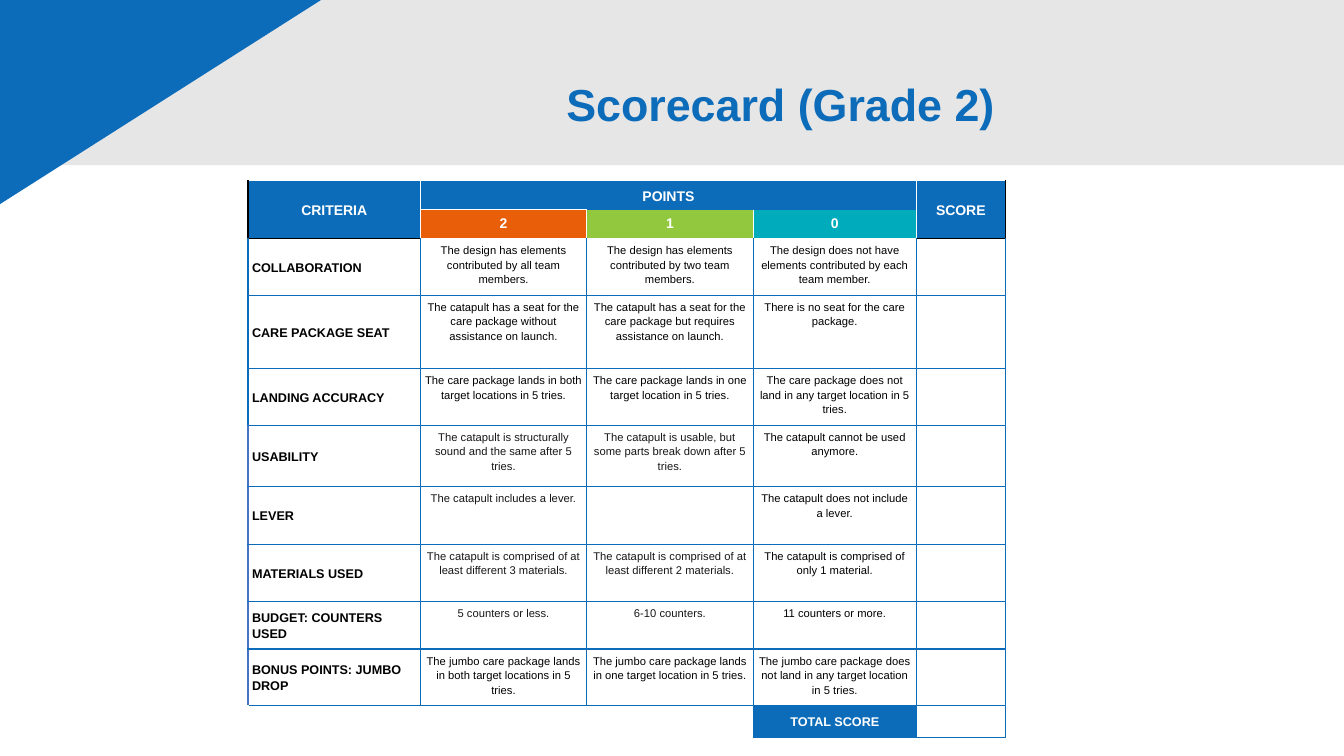
from dataclasses import dataclass
from typing import Optional

import lxml.etree
import pptx
import pptx.dml.color
import pptx.enum.shapes
import pptx.enum.text
import pptx.oxml.ns
import pptx.util

EMU_PER_PX = 9144  # 100 px to the inch
ALIGN = pptx.enum.text.PP_ALIGN
ANCHOR = pptx.enum.text.MSO_ANCHOR
PRESET = pptx.enum.shapes.MSO_SHAPE


@dataclass(frozen=True)
class Theme:
    font: str = "Arial"
    blue: str = "0D6CB9"
    accent: str = "4472C4"
    grey: str = "E7E6E6"
    orange: str = "E95E09"
    green: str = "92C83E"
    teal: str = "00ACBB"
    white: str = "FFFFFF"
    black: str = "000000"
    ink: str = "181717"
    title_size: int = 32
    header_size: int = 10
    label_size: int = 9
    body_size: int = 8


THEME = Theme()


@dataclass(frozen=True)
class Box:
    left: int
    top: int
    width: int
    height: int


@dataclass(frozen=True)
class Criterion:
    label: str
    levels: tuple[str, str, str]
    height: int
    level_colour: str = THEME.black


@dataclass(frozen=True)
class CellStyle:
    size: int
    colour: str
    fill: str = THEME.white
    bold: bool = False
    align: ALIGN = ALIGN.CENTER
    anchor: ANCHOR = ANCHOR.MIDDLE


CRITERIA = (
    Criterion("COLLABORATION", (
        "The design has elements contributed by all team members.",
        "The design has elements contributed by two team members.",
        "The design does not have elements contributed by each team member."), 56),
    Criterion("CARE PACKAGE SEAT", (
        "The catapult has a seat for the care package without assistance on launch.",
        "The catapult has a seat for the care package but requires assistance on launch.",
        "There is no seat for the care package."), 73),
    Criterion("LANDING ACCURACY", (
        "The care package lands in both target locations in 5 tries.",
        "The care package lands in one target location in 5 tries.",
        "The care package does not land in any target location in 5 tries."), 56),
    Criterion("USABILITY", (
        "The catapult is structurally sound and the same after 5 tries.",
        "The catapult is usable, but some parts break down after 5 tries.",
        "The catapult cannot be used anymore."), 61, THEME.ink),
    Criterion("LEVER", (
        "The catapult includes a lever.",
        "",
        "The catapult does not include a lever."), 57, THEME.ink),
    Criterion("MATERIALS USED", (
        "The catapult is comprised of at least different 3 materials.",
        "The catapult is comprised of at least different 2 materials.",
        "The catapult is comprised of only 1 material."), 57, THEME.ink),
    Criterion("BUDGET: COUNTERS USED", (
        "5 counters or less.", "6-10 counters.", "11 counters or more."), 47, THEME.ink),
    Criterion("BONUS POINTS: JUMBO DROP", (
        "The jumbo care package lands in both target locations in 5 tries.",
        "The jumbo care package lands in one target location in 5 tries.",
        "The jumbo care package does not land in any target location in 5 tries."), 56),
)
COLUMN_WIDTHS = (171, 165, 165, 162, 88)
HEADER_ROWS = 2
ROW_HEIGHTS = (29, 29, *(criterion.height for criterion in CRITERIA), 32)
TOTAL_ROW = len(ROW_HEIGHTS) - 1
FIRST_ACCENT_ROW = 5
HEADER = CellStyle(THEME.header_size, THEME.white, THEME.blue, bold=True)
LABEL = CellStyle(THEME.label_size, THEME.black, bold=True, align=ALIGN.LEFT)
TOTAL = CellStyle(THEME.label_size, THEME.white, THEME.blue, bold=True)
BLANK = CellStyle(THEME.body_size, THEME.black)


def px(length: int) -> pptx.util.Emu:
    return pptx.util.Emu(length * EMU_PER_PX)


def rgb(colour: str) -> pptx.dml.color.RGBColor:
    return pptx.dml.color.RGBColor.from_string(colour)


def place(shape, box: Box) -> None:
    shape.left, shape.top = px(box.left), px(box.top)
    shape.width, shape.height = px(box.width), px(box.height)


def add_backdrop(slide, preset: PRESET, box: Box, colour: str):
    shape = slide.shapes.add_shape(preset, 0, 0, 0, 0)
    place(shape, box)
    shape.shadow.inherit = False
    shape.fill.solid()
    shape.fill.fore_color.rgb = rgb(colour)
    shape.line.fill.background()
    return shape


def format_run(run, size: int, colour: str, bold: bool) -> None:
    run.font.name = THEME.font
    run.font.size = pptx.util.Pt(size)
    run.font.bold = bold
    run.font.color.rgb = rgb(colour)


def horizontal_edge(line: int, column: int) -> Optional[str]:
    """Colour of the grid line above row number `line`."""
    if line == 0:
        return THEME.white
    if line == 1:
        return THEME.white if column == 1 else None
    if line == HEADER_ROWS:
        return THEME.white if 1 <= column <= 3 else THEME.black
    if line > TOTAL_ROW and column < 3:
        return THEME.white
    return THEME.blue


def vertical_edge(row: int, line: int) -> Optional[str]:
    """Colour of the grid line left of column number `line`."""
    if row < HEADER_ROWS:
        if line in (0, len(COLUMN_WIDTHS)):
            return THEME.black
        return None if row == 0 and line in (2, 3) else THEME.white
    if row == TOTAL_ROW and line < 3:
        return THEME.white if line == 0 else None
    return THEME.accent if line == 0 and row >= FIRST_ACCENT_ROW else THEME.blue


def draw_borders(cell, row: int, column: int) -> None:
    edges = {
        "a:lnL": vertical_edge(row, column),
        "a:lnR": vertical_edge(row, column + 1),
        "a:lnT": horizontal_edge(row, column),
        "a:lnB": horizontal_edge(row + 1, column),
    }
    properties = cell._tc.get_or_add_tcPr()
    qn = pptx.oxml.ns.qn
    for tag, colour in edges.items():
        line = lxml.etree.SubElement(properties, qn(tag), w=str(pptx.util.Pt(1)))
        if colour is None:
            lxml.etree.SubElement(line, qn("a:noFill"))
        else:
            fill = lxml.etree.SubElement(line, qn("a:solidFill"))
            lxml.etree.SubElement(fill, qn("a:srgbClr"), val=colour)


def fill_cell(cell, text: str, style: CellStyle) -> None:
    cell.fill.solid()
    cell.fill.fore_color.rgb = rgb(style.fill)
    cell.margin_left = cell.margin_right = cell.margin_top = cell.margin_bottom = px(4)
    cell.vertical_anchor = style.anchor
    paragraph = cell.text_frame.paragraphs[0]
    paragraph.alignment = style.align
    paragraph.line_spacing = 1.15
    if text:
        paragraph.text = text
        format_run(paragraph.runs[0], style.size, style.colour, style.bold)
    else:  # keeps empty cells from stretching their row
        lxml.etree.SubElement(paragraph._p, pptx.oxml.ns.qn("a:endParaRPr"), sz=str(style.size * 100))


def scorecard_cells() -> dict[tuple[int, int], tuple[str, CellStyle]]:
    cells = {(0, 0): ("CRITERIA", HEADER), (0, 1): ("POINTS", HEADER), (0, 4): ("SCORE", HEADER),
             (TOTAL_ROW, 3): ("TOTAL SCORE", TOTAL)}
    for column, (points, fill) in enumerate(
            (("2", THEME.orange), ("1", THEME.green), ("0", THEME.teal)), start=1):
        cells[1, column] = (points, CellStyle(THEME.header_size, THEME.white, fill, True, anchor=ANCHOR.TOP))
    for row, criterion in enumerate(CRITERIA, start=HEADER_ROWS):
        cells[row, 0] = (criterion.label, LABEL)
        for column, text in enumerate(criterion.levels, start=1):
            colour = THEME.black if column == 3 else criterion.level_colour
            cells[row, column] = (text, CellStyle(THEME.body_size, colour, anchor=ANCHOR.TOP))
    return cells


def add_scorecard(slide, left: int, top: int) -> None:
    frame = slide.shapes.add_table(len(ROW_HEIGHTS), len(COLUMN_WIDTHS), px(left), px(top),
                                   px(sum(COLUMN_WIDTHS)), px(sum(ROW_HEIGHTS)))
    table = frame.table
    table.first_row = table.horz_banding = False
    for column, width in zip(table.columns, COLUMN_WIDTHS):
        column.width = px(width)
    for row, height in zip(table.rows, ROW_HEIGHTS):
        row.height = px(height)
    for first, last in (((0, 0), (1, 0)), ((0, 1), (0, 3)), ((0, 4), (1, 4)), ((TOTAL_ROW, 0), (TOTAL_ROW, 2))):
        table.cell(*first).merge(table.cell(*last))
    cells = scorecard_cells()
    for row in range(len(ROW_HEIGHTS)):
        for column in range(len(COLUMN_WIDTHS)):
            cell = table.cell(row, column)
            draw_borders(cell, row, column)
            fill_cell(cell, *cells.get((row, column), ("", BLANK)))


def set_title(slide, text: str, box: Box) -> None:
    title = slide.shapes.title
    place(title, box)
    frame = title.text_frame
    frame.text = text
    frame.auto_size = pptx.enum.text.MSO_AUTO_SIZE.NONE
    frame.vertical_anchor = ANCHOR.MIDDLE
    paragraph = frame.paragraphs[0]
    paragraph.alignment = ALIGN.RIGHT
    paragraph.line_spacing = 0.9
    format_run(paragraph.runs[0], THEME.title_size, THEME.blue, True)


def main() -> None:
    presentation = pptx.Presentation()
    presentation.slide_width, presentation.slide_height = px(1333), px(750)
    slide = presentation.slides.add_slide(presentation.slide_layouts[5])
    # Header band and corner, with the title brought in front of them
    add_backdrop(slide, PRESET.RECTANGLE, Box(-26, -19, 1359, 183), THEME.grey)
    corner = add_backdrop(slide, PRESET.RIGHT_TRIANGLE, Box(-257, -172, 846, 538), THEME.blue)
    corner._element.spPr.xfrm.set("flipV", "1")
    corner._element.addnext(slide.shapes.title._element)
    set_title(slide, "Scorecard (Grade 2)", Box(27, 34, 970, 145))
    # Scoring table
    add_scorecard(slide, 246, 179)
    presentation.save("out.pptx")


if __name__ == "__main__":
    main()
